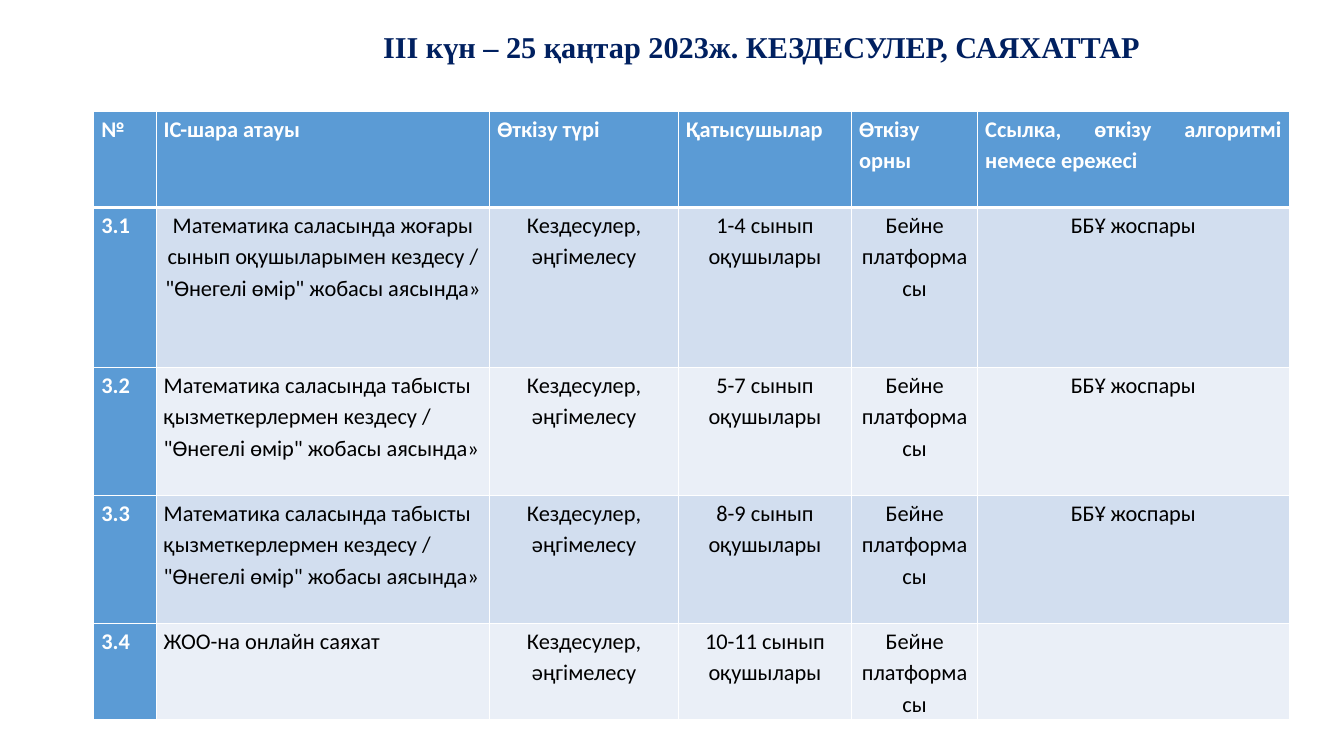
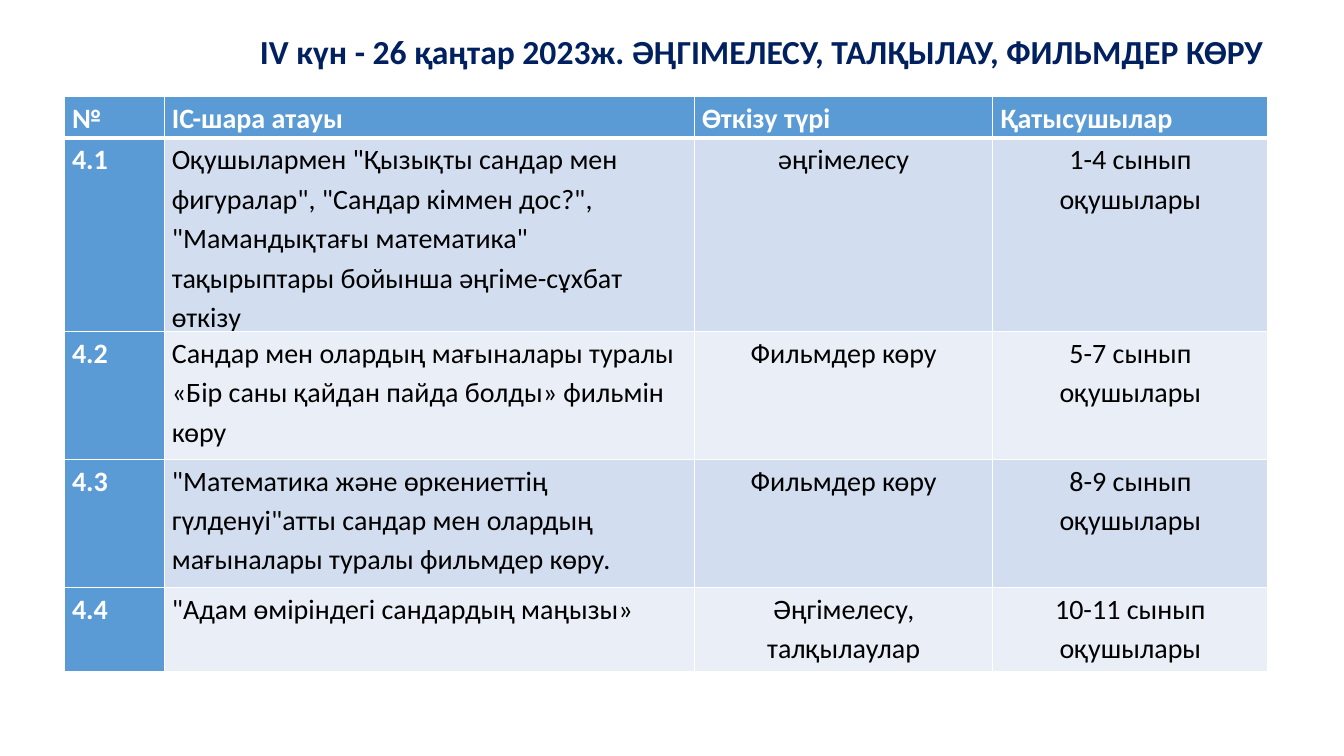
"""Build two programme slides, each with a title and a timetable."""
from dataclasses import dataclass

from lxml import etree
from pptx import Presentation
from pptx import util as u
from pptx.dml.color import RGBColor
from pptx.enum import text
from pptx.oxml.ns import qn

ALIGN = text.PP_ALIGN


@dataclass(frozen=True)
class Theme:
    """Colours, type sizes, spacing and grid of the deck."""
    navy: str = "002060"
    header: str = "5B9BD5"
    bands: tuple = ("D2DEEF", "EAEFF7")
    light: str = "FFFFFF"
    ink: str = "000000"
    serif: str = "Times New Roman"
    sans: str = "Calibri"
    small_title: float = 21.6
    large_title: float = 24
    small_body: float = 16
    large_body: float = 20
    title_spacing: float = 0.9
    body_spacing: float = 1.15
    thin: float = 1
    thick: float = 3
    grid: float = 0.1
    columns: float = 133.33
    rows: float = 75
    cell_inset: float = 0.75


def write(frame, words, *, font, size, color, bold=False, align=ALIGN.LEFT, spacing=1.0):
    """Write one formatted paragraph into a text frame."""
    para = frame.paragraphs[0]
    para.alignment = align
    para.line_spacing = spacing
    span = para.add_run()
    span.text = words
    span.font.name = font
    span.font.size = u.Pt(size)
    span.font.bold = bold
    span.font.color.rgb = RGBColor.from_string(color)


class Programme:
    """A deck with its theme and current page."""

    def __init__(self, theme):
        """Start an empty deck."""
        self.theme = theme
        self.deck = Presentation()
        self.deck.slide_width = self.cells(theme.columns)
        self.deck.slide_height = self.cells(theme.rows)
        self.page = None

    def cells(self, count):
        """Turn a count of grid cells into a length."""
        return u.Inches(count * self.theme.grid)

    def add_page(self):
        """Start a blank page."""
        self.page = self.deck.slides.add_slide(self.deck.slide_layouts[6])

    def title(self, words, top, height, font, size):
        """Add the centred page title."""
        box = self.page.shapes.add_textbox(*map(self.cells, (20.9, top, 109.3, height)))
        frame = box.text_frame
        frame.word_wrap = True
        frame.vertical_anchor = text.MSO_ANCHOR.MIDDLE
        write(frame, words, font=font, size=size, color=self.theme.navy, bold=True,
              align=ALIGN.CENTER, spacing=self.theme.title_spacing)

    def borders(self, cell, top, bottom):
        """Draw the four white borders of a cell."""
        thin = self.theme.thin
        properties = cell._tc.get_or_add_tcPr()
        for side, width in (("L", thin), ("R", thin), ("T", top), ("B", bottom)):
            line = etree.SubElement(properties, qn(f"a:ln{side}"), w=str(u.Pt(width)))
            fill = etree.SubElement(line, qn("a:solidFill"))
            etree.SubElement(fill, qn("a:srgbClr"), val=self.theme.light)

    def cell(self, cell, words, row, column, size, align):
        """Style and fill one cell by its place in the table."""
        theme = self.theme
        strong = row == 0 or column == 0
        self.borders(cell, theme.thick if row == 1 else theme.thin,
                     theme.thick if row == 0 else theme.thin)
        cell.fill.solid()
        fill = theme.header if strong else theme.bands[(row - 1) % 2]
        cell.fill.fore_color.rgb = RGBColor.from_string(fill)
        cell.margin_left = cell.margin_right = self.cells(theme.cell_inset)
        cell.margin_top = cell.margin_bottom = 0
        if words:
            write(cell.text_frame, words, font=theme.sans, size=size, bold=strong,
                  color=theme.light if strong else theme.ink, align=align,
                  spacing=theme.body_spacing)

    def table(self, records, left, top, widths, heights, size, centred=()):
        """Add a banded table with a header row and a header column."""
        place = map(self.cells, (left, top, sum(widths), sum(heights)))
        table = self.page.shapes.add_table(len(heights), len(widths), *place).table
        for column, width in zip(table.columns, widths):
            column.width = self.cells(width)
        for row, height in zip(table.rows, heights):
            row.height = self.cells(height)
        for row, record in enumerate(records):
            for column, words in enumerate(record):
                if row == 0:
                    align = ALIGN.JUSTIFY
                elif column > 1 or (row, column) in centred:
                    align = ALIGN.CENTER
                else:
                    align = ALIGN.LEFT
                self.cell(table.cell(row, column), words, row, column, size, align)


HEADINGS = ("№", "ІС-шара атауы", "Өткізу түрі", "Қатысушылар")
GRADES = [f"{span} сынып оқушылары" for span in ("1-4", "5-7", "8-9", "10-11")]
PROJECT = '"Өнегелі өмір" жобасы аясында»'
SUCCESS = f"Математика саласында табысты қызметкерлермен кездесу / {PROJECT}"
PLAN = "ББҰ жоспары"

MEETINGS = (
    (f"Математика саласында жоғары сынып оқушыларымен кездесу / {PROJECT}", PLAN),
    (SUCCESS, PLAN),
    (SUCCESS, PLAN),
    ("ЖОО-на онлайн саяхат", ""),
)
TALKS = (
    ('Оқушылармен "Қызықты сандар мен фигуралар", "Сандар кіммен дос?", '
     '"Мамандықтағы математика" тақырыптары бойынша әңгіме-сұхбат өткізу', "әңгімелесу"),
    ("Сандар мен олардың мағыналары туралы «Бір саны қайдан пайда болды» фильмін көру",
     "Фильмдер көру"),
    ('"Математика және өркениеттің гүлденуі"атты сандар мен олардың '
     "мағыналары туралы фильмдер көру.", "Фильмдер көру"),
    ('"Адам өміріндегі сандардың маңызы»', "Әңгімелесу, талқылаулар"),
)


def main():
    """Build and save the deck."""
    theme = Theme()
    programme = Programme(theme)

    programme.add_page()
    programme.title("ІІІ күн – 25 қаңтар 2023ж. КЕЗДЕСУЛЕР, САЯХАТТАР",
                    3, 3.7, theme.serif, theme.small_title)
    meetings = [HEADINGS + ("Өткізу орны", "Ссылка, өткізу алгоритмі немесе ережесі")]
    for number, ((name, rules), grade) in enumerate(zip(MEETINGS, GRADES), 1):
        meetings.append((f"3.{number}", name, "Кездесулер, әңгімелесу", grade,
                         "Бейне платформасы", rules))
    programme.table(meetings, 9.3, 11.1, (6.2, 33.1, 18.7, 17.2, 12.5, 30.9),
                    (9.5, 15.9, 12.7, 12.7, 9.5), theme.small_body, centred={(1, 1)})

    programme.add_page()
    programme.title("IV күн - 26 қаңтар 2023ж. ӘҢГІМЕЛЕСУ, ТАЛҚЫЛАУ, ФИЛЬМДЕР КӨРУ",
                    1, 8.6, theme.sans, theme.large_title)
    talks = [HEADINGS]
    for number, ((name, kind), grade) in enumerate(zip(TALKS, GRADES), 1):
        talks.append((f"4.{number}", name, kind, grade))
    programme.table(talks, 6.4, 9.6, (9.9, 52.6, 29.6, 27.3),
                    (4.1, 17.9, 12.7, 12.7, 8.4), theme.large_body)

    programme.deck.save("out.pptx")


if __name__ == "__main__":
    main()
